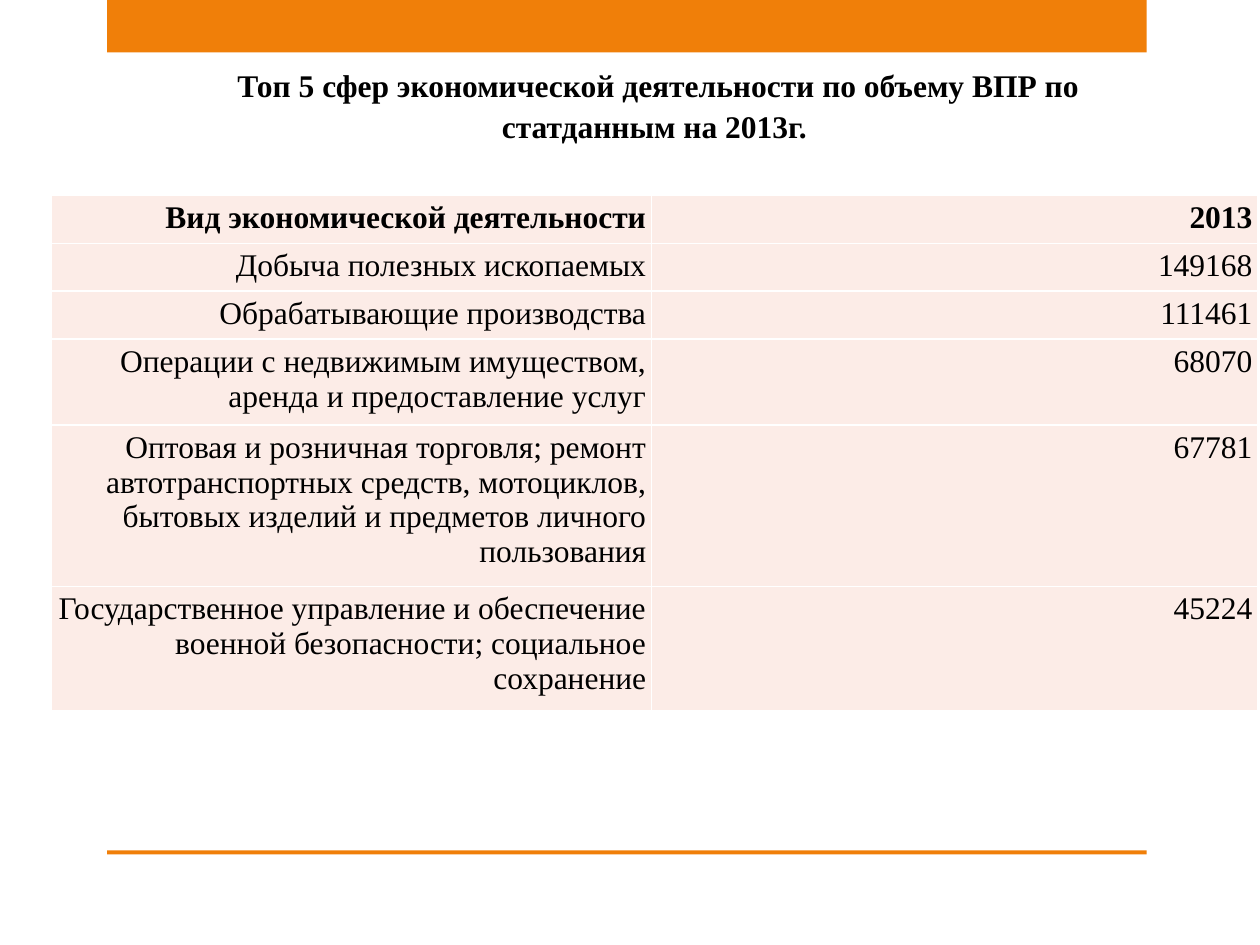
from typing import NamedTuple

from lxml.etree import SubElement
from pptx import Presentation
from pptx.dml.color import RGBColor
from pptx.enum.shapes import MSO_SHAPE as Shape
from pptx.enum.text import MSO_ANCHOR as Anchor, MSO_AUTO_SIZE as AutoSize, PP_ALIGN as Align
from pptx.oxml.ns import qn
from pptx.util import Pt

ORANGE = RGBColor(0xF0, 0x7F, 0x09)
PALE_PINK = RGBColor(0xFC, 0xEC, 0xE7)
WHITE = RGBColor(0xFF, 0xFF, 0xFF)
BLACK = RGBColor(0, 0, 0)

TITLE = "Топ 5 сфер экономической деятельности по объему ВПР по статданным на 2013г. "
COLUMN_WIDTHS = (342.7, 346.4)
MARGINS = ("margin_left", "margin_top", "margin_right", "margin_bottom")


class Bar(NamedTuple):
    top: float
    height: float


class Row(NamedTuple):
    activity: str
    volume: str
    height: float = 27.1
    bold: bool = False


BARS = (Bar(0, 30), Bar(486, 2.2))
ROWS = (
    Row("Вид экономической деятельности", "2013", bold=True),
    Row("Добыча полезных ископаемых", "149168"),
    Row("Обрабатывающие производства", "111461"),
    Row("Операции с недвижимым имуществом, аренда и предоставление услуг", "68070", 48.6),
    Row("Оптовая и розничная торговля; ремонт автотранспортных средств, мотоциклов, "
        "бытовых изделий и предметов личного пользования", "67781", 92),
    Row("Государственное управление и обеспечение военной безопасности; "
        "социальное сохранение", "45224", 70.9),
)


def set_all(target, values: dict) -> None:
    for name, value in values.items():
        setattr(target, name, value)


def write(frame, text: str, align: Align, bold: bool) -> None:
    para = frame.paragraphs[0]
    para.alignment = align
    span = para.add_run()
    span.text = text
    set_all(span.font, {"name": "Times New Roman", "size": Pt(18), "bold": bold})
    span.font.color.rgb = BLACK


def draw_bar(page, bar: Bar) -> None:
    box = page.shapes.add_shape(Shape.RECTANGLE, Pt(61.2), Pt(bar.top), Pt(594), Pt(bar.height))
    box.shadow.inherit = False
    box.fill.solid()
    box.fill.fore_color.rgb = ORANGE
    box.line.fill.background()


def draw_title(page) -> None:
    title = page.shapes.title
    set_all(title, {"left": Pt(121.7), "top": Pt(31.7), "width": Pt(509), "height": Pt(51.1)})
    frame = title.text_frame
    set_all(frame, {"word_wrap": True, "vertical_anchor": Anchor.TOP,
                    "auto_size": AutoSize.SHAPE_TO_FIT_TEXT})
    write(frame, TITLE, Align.CENTER, True)
    set_all(frame.paragraphs[0], {"line_spacing": 1.1, "space_before": Pt(0)})


def add_borders(cell) -> None:
    properties = cell._tc.get_or_add_tcPr()
    for position, side in enumerate(("lnL", "lnR", "lnT", "lnB")):
        line = SubElement(properties, qn(f"a:{side}"), w=str(Pt(1)))
        fill = SubElement(line, qn("a:solidFill"))
        SubElement(fill, qn("a:srgbClr"), val=str(WHITE))
        properties.insert(position, line)


def draw_table(page) -> None:
    table = page.shapes.add_table(
        len(ROWS), len(COLUMN_WIDTHS), Pt(29.5), Pt(111.6),
        Pt(sum(COLUMN_WIDTHS)), Pt(sum(row.height for row in ROWS))).table
    set_all(table, {"first_row": False, "horz_banding": False})
    for column, width in zip(table.columns, COLUMN_WIDTHS):
        column.width = Pt(width)
    for table_row, row in zip(table.rows, ROWS):
        table_row.height = Pt(row.height)
        for cell, text in zip(table_row.cells, (row.activity, row.volume)):
            set_all(cell, dict.fromkeys(MARGINS, Pt(2.9)))
            cell.fill.solid()
            cell.fill.fore_color.rgb = PALE_PINK
            add_borders(cell)
            write(cell.text_frame, text, Align.RIGHT, row.bold)


def main() -> None:
    deck = Presentation()
    set_all(deck, {"slide_width": Pt(720), "slide_height": Pt(540)})
    page = deck.slides.add_slide(deck.slide_layouts.get_by_name("Title Only"))
    for bar in BARS:
        draw_bar(page, bar)
    draw_title(page)
    draw_table(page)
    deck.save("out.pptx")


if __name__ == "__main__":
    main()
